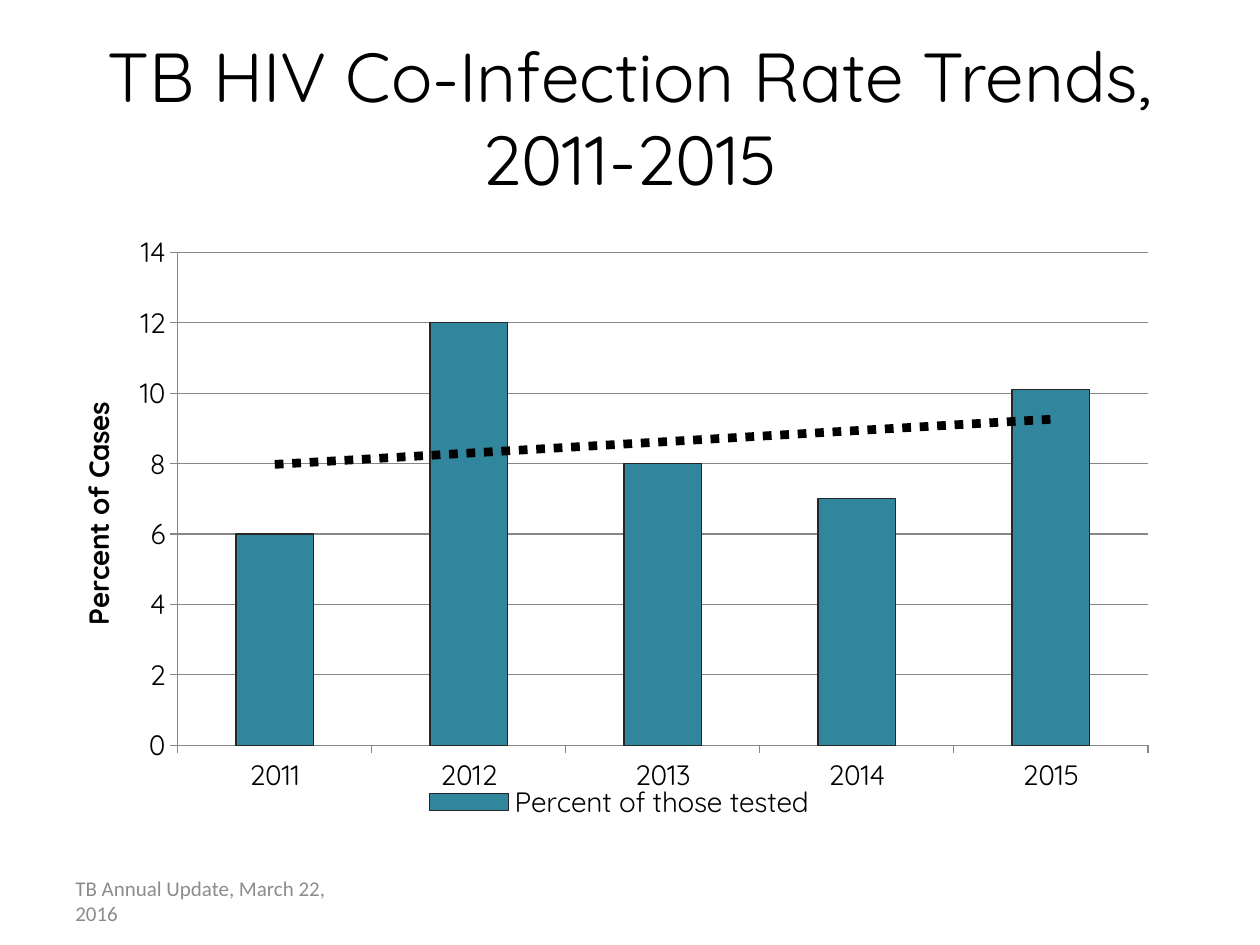
import pptx
import pptx.util
import pptx.chart.data
import pptx.enum.chart
import pptx.enum.text
import pptx.oxml
import pptx.oxml.ns
from pptx.dml.color import RGBColor

Inches, Pt = pptx.util.Inches, pptx.util.Pt
enum, text = pptx.enum.chart, pptx.enum.text
theme = {
    "face": "Quicksand", "foot face": "Calibri",
    "title": 39.6, "label": 16, "foot": 12,
    "ink": "000000", "bar": "31859C", "edge": "262626",
    "grid": "878787", "grey": "8C8C8C",
}


def style(font, size, color="ink", face="face"):
    font.name, font.size = theme[face], Pt(theme[size])
    font.color.rgb = RGBColor.from_string(theme[color])


def chart_xml(body):
    """Parse a chart element written with the c: and a: prefixes."""
    tag, rest = body.split(">", 1)
    return pptx.oxml.parse_xml(f"{tag} {pptx.oxml.ns.nsdecls('c', 'a')}>{rest}")


deck = pptx.Presentation()
deck.slide_width, deck.slide_height = Inches(10), Inches(7.5)
slide = deck.slides.add_slide(deck.slide_layouts[5])
wide, high = deck.slide_width, deck.slide_height
edge = int(wide * 0.05)

# Title
title = slide.shapes.title
title.left, title.top = edge, int(high * 0.04)
title.width, title.height = wide - 2 * edge, Inches(1.25)
frame = title.text_frame
frame.text = "TB HIV Co-Infection Rate Trends, 2011-2015"
frame.word_wrap = True
frame.vertical_anchor = text.MSO_ANCHOR.MIDDLE
frame.paragraphs[0].alignment = text.PP_ALIGN.CENTER
style(frame.paragraphs[0].font, "title")

# Chart
data = pptx.chart.data.CategoryChartData()
data.categories = ["2011", "2012", "2013", "2014", "2015"]
data.add_series("Percent of those tested", [6, 12, 8, 7, 10.1])
chart = slide.shapes.add_chart(
    enum.XL_CHART_TYPE.COLUMN_CLUSTERED,
    Inches(0.58), Inches(1.75), Inches(8.75), Inches(5.08), data).chart
chart.has_title = False
style(chart.font, "label")
plot = chart.plots[0]
plot.gap_width, plot.vary_by_categories = 150, False

years, rate = chart.category_axis, chart.value_axis
for axis in (years, rate):
    style(axis.tick_labels.font, "label")
    axis.major_tick_mark = enum.XL_TICK_MARK.OUTSIDE
    axis.format.line.color.rgb = RGBColor.from_string(theme["grid"])
    axis.format.line.width = Pt(0.75)
years.has_major_gridlines = False
rate.minimum_scale, rate.maximum_scale, rate.major_unit = 0, 14, 2
rate.has_major_gridlines = True
grid = rate.major_gridlines.format.line
grid.color.rgb, grid.width = RGBColor.from_string(theme["grid"]), Pt(0.75)
label = rate.axis_title.text_frame
label.text = "Percent of Cases"
style(label.paragraphs[0].font, "label")
label.paragraphs[0].font.bold = True

bars = plot.series[0]
bars.format.fill.solid()
bars.format.fill.fore_color.rgb = RGBColor.from_string(theme["bar"])
bars.format.line.color.rgb = RGBColor.from_string(theme["edge"])
bars.format.line.width = Pt(0.75)
bars._element.find(pptx.oxml.ns.qn("c:cat")).addprevious(chart_xml(
    f'<c:trendline><c:spPr><a:ln w="{Pt(5)}"><a:solidFill>'
    f'<a:srgbClr val="{theme["ink"]}"/></a:solidFill>'
    '<a:prstDash val="sysDot"/></a:ln></c:spPr>'
    '<c:trendlineType val="linear"/><c:dispRSqr val="0"/>'
    '<c:dispEq val="0"/></c:trendline>'))

chart.has_legend = True
legend = chart.legend
legend.position = enum.XL_LEGEND_POSITION.BOTTOM
legend.include_in_layout = False
style(legend.font, "label")
legend._element.find(pptx.oxml.ns.qn("c:legendPos")).addnext(chart_xml(
    '<c:legendEntry><c:idx val="1"/><c:delete val="1"/></c:legendEntry>'))

# Plot and legend areas as shares of the chart
area = chart._chartSpace.chart.plotArea
places = [(area, '<c:layoutTarget val="inner"/>', (0.095, 0.05, 0.88, 0.77)),
          (legend._element, "", (0.29, 0.92, 0.42, 0.07))]
for owner, target, box in places:
    for old in owner.findall(pptx.oxml.ns.qn("c:layout")):
        owner.remove(old)
    modes = '<c:xMode val="edge"/><c:yMode val="edge"/>'
    sizes = "".join(f'<c:{k} val="{v}"/>' for k, v in zip("xywh", box))
    layout = chart_xml(f"<c:layout><c:manualLayout>{target}{modes}{sizes}"
                       "</c:manualLayout></c:layout>")
    if owner is area:
        owner.insert(0, layout)
    else:
        owner.find(pptx.oxml.ns.qn("c:overlay")).addprevious(layout)

# Footer
foot = slide.shapes.add_textbox(edge, Inches(6.95), Inches(2.33), Inches(0.4))
frame = foot.text_frame
frame.text = "TB Annual Update, March 22, 2016"
frame.word_wrap = True
frame.vertical_anchor = text.MSO_ANCHOR.MIDDLE
style(frame.paragraphs[0].font, "foot", "grey", "foot face")

deck.save("out.pptx")
